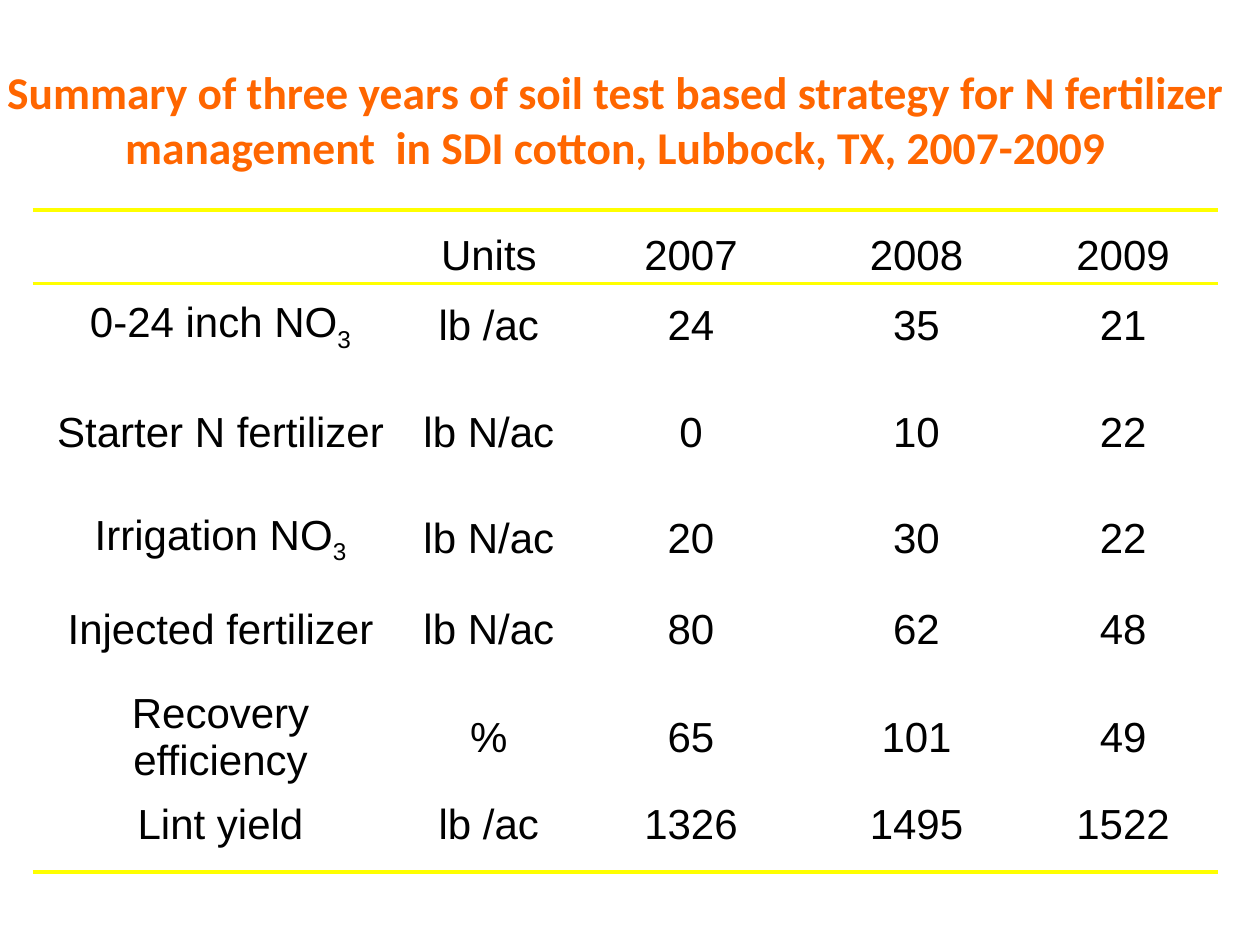
"""Build a slide summarising three years of N fertilizer management in cotton."""
from dataclasses import dataclass

import lxml.etree
import pptx
import pptx.dml.color
import pptx.enum.shapes
import pptx.enum.text
import pptx.oxml.ns
import pptx.util


@dataclass(frozen=True)
class Theme:
    title_color: pptx.dml.color.RGBColor = pptx.dml.color.RGBColor(0xFF, 0x66, 0x00)
    text_color: pptx.dml.color.RGBColor = pptx.dml.color.RGBColor(0, 0, 0)
    rule_color: pptx.dml.color.RGBColor = pptx.dml.color.RGBColor(0xFF, 0xFF, 0x00)
    title_font: str = "Calibri"
    table_font: str = "Arial"
    title_size: float = 26
    table_size: float = 24
    rule_width: float = 2.25


@dataclass(frozen=True)
class Measure:
    label: str
    units: str
    values: tuple[str, str, str]
    height: float
    subscript: str = ""


THEME = Theme()
WIDTH, HEIGHT = pptx.util.Inches(10), pptx.util.Inches(7.5)
TITLE = ("Summary of three years of soil test based strategy for N fertilizer "
         "management  in SDI cotton, Lubbock, TX, 2007-2009")
COLUMN_WIDTHS = (2.84, 1.42, 1.79, 1.79, 1.49)
TABLE_LEFT, TABLE_TOP = 0.33, 1.75
RULE_LEFT, RULE_RIGHT = 0.26, 9.67
RULE_TOPS = (1.67, 2.25, 6.92)
MEASURES = (
    Measure("", "Units", ("2007", "2008", "2009"), 0.56),
    Measure("0-24 inch NO", "lb /ac", ("24", "35", "21"), 0.56, "3"),
    Measure("Starter N fertilizer", "lb N/ac", ("0", "10", "22"), 1.13),
    Measure("Irrigation NO", "lb N/ac", ("20", "30", "22"), 0.56, "3"),
    Measure("Injected fertilizer", "lb N/ac", ("80", "62", "48"), 0.88),
    Measure("Recovery efficiency", "%", ("65", "101", "49"), 0.83),
    Measure("Lint yield", "lb /ac", ("1326", "1495", "1522"), 0.56),
)


def style_span(span, font: str, size: float, color: pptx.dml.color.RGBColor, bold: bool = False) -> None:
    span.font.name = font
    span.font.size = pptx.util.Pt(size)
    span.font.bold = bold
    span.font.color.rgb = color


def write_title(page) -> None:
    box = page.shapes.title
    box.left, box.top = pptx.util.Inches(-0.11), pptx.util.Inches(0.46)
    box.width, box.height = WIDTH, pptx.util.Inches(0.98)
    frame = box.text_frame
    frame.text = TITLE
    frame.word_wrap = True
    frame.auto_size = pptx.enum.text.MSO_AUTO_SIZE.SHAPE_TO_FIT_TEXT
    frame.vertical_anchor = pptx.enum.text.MSO_ANCHOR.TOP
    para = frame.paragraphs[0]
    para.alignment = pptx.enum.text.PP_ALIGN.CENTER
    style_span(para.runs[0], THEME.title_font, THEME.title_size, THEME.title_color, bold=True)


def write_cell(cell, text: str, subscript: str = "") -> None:
    cell.fill.background()
    cell.vertical_anchor = pptx.enum.text.MSO_ANCHOR.MIDDLE
    cell.margin_left = cell.margin_right = pptx.util.Inches(0.07)
    cell.margin_top = cell.margin_bottom = 0
    para = cell.text_frame.paragraphs[0]
    para.alignment = pptx.enum.text.PP_ALIGN.CENTER
    para.text = text
    if subscript:
        span = para.add_run()
        span.text = subscript
        span.font._element.set("baseline", "-25000")
    for span in para.runs:
        style_span(span, THEME.table_font, THEME.table_size, THEME.text_color)


def draw_table(page) -> None:
    width = sum(COLUMN_WIDTHS)
    height = sum(measure.height for measure in MEASURES)
    table = page.shapes.add_table(
        len(MEASURES), len(COLUMN_WIDTHS),
        *map(pptx.util.Inches, (TABLE_LEFT, TABLE_TOP, width, height))).table
    table.first_row = table.horz_banding = False
    for column, column_width in zip(table.columns, COLUMN_WIDTHS):
        column.width = pptx.util.Inches(column_width)
    for row, measure in zip(table.rows, MEASURES):
        row.height = pptx.util.Inches(measure.height)
        label, *others = row.cells
        write_cell(label, measure.label, measure.subscript)
        for cell, text in zip(others, (measure.units, *measure.values)):
            write_cell(cell, text)


def draw_rule(page, top: float) -> None:
    rule = page.shapes.add_connector(
        pptx.enum.shapes.MSO_CONNECTOR.STRAIGHT,
        *map(pptx.util.Inches, (RULE_LEFT, top, RULE_RIGHT, top)))
    rule.line.color.rgb = THEME.rule_color
    rule.line.width = pptx.util.Pt(THEME.rule_width)
    lxml.etree.SubElement(rule._element.spPr, pptx.oxml.ns.qn("a:effectLst"))


def main() -> None:
    deck = pptx.Presentation()
    deck.slide_width, deck.slide_height = WIDTH, HEIGHT
    page = deck.slides.add_slide(deck.slide_layouts.get_by_name("Title Only"))
    write_title(page)
    draw_table(page)
    for top in RULE_TOPS:
        draw_rule(page, top)
    deck.save("out.pptx")


if __name__ == "__main__":
    main()
